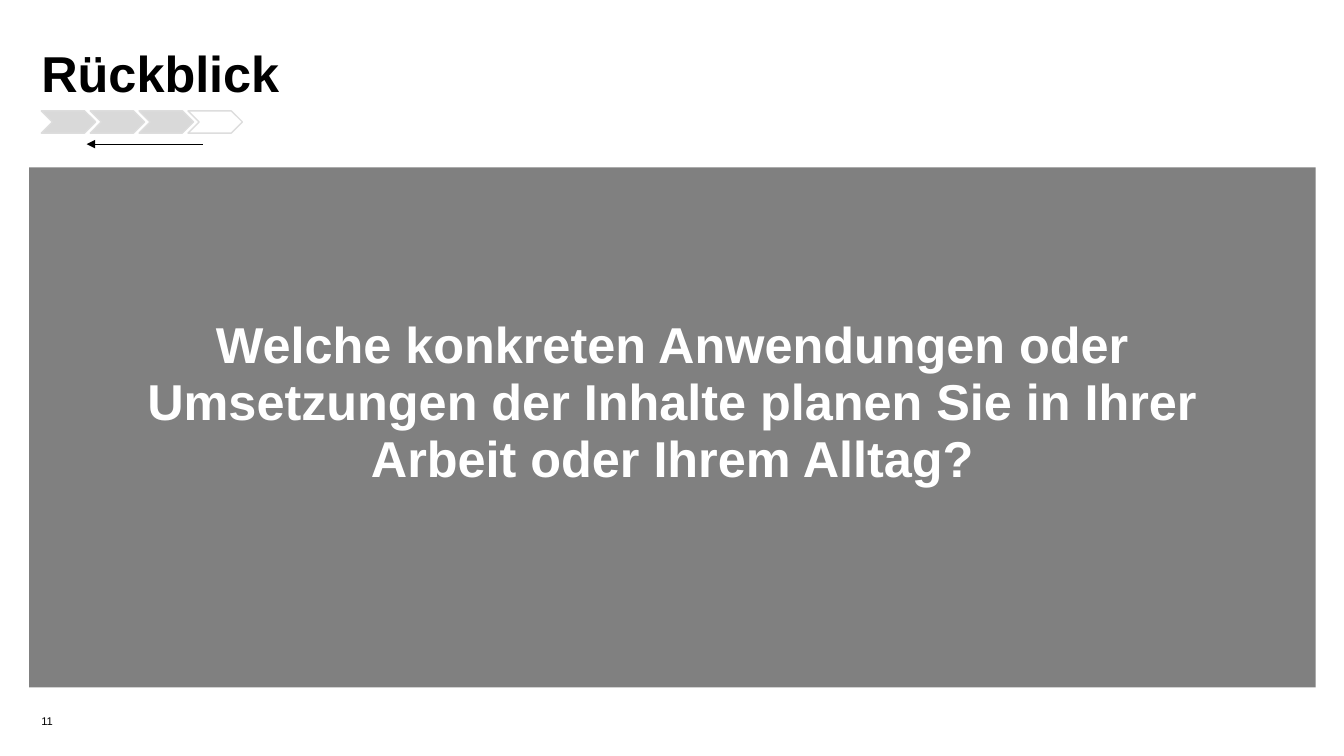
from lxml import etree
from pptx import Presentation
from pptx import util as u
from pptx.dml.color import RGBColor
from pptx.enum import shapes, text
from pptx.oxml import ns

BLACK = RGBColor(0x00, 0x00, 0x00)
WHITE = RGBColor(0xFF, 0xFF, 0xFF)
PANEL_GRAY = RGBColor(0x80, 0x80, 0x80)
STEP_GRAY = RGBColor(0xD9, 0xD9, 0xD9)
STEP_LINE = RGBColor(0xDD, 0xDD, 0xDD)

STEP_COUNT = 4
STEP_PITCH = 0.485


class SlideBuilder:
    font_name = "Arial"

    def __init__(self, presentation):
        self.slide = presentation.slides.add_slide(presentation.slide_layouts[5])

    def set_text(self, shape, content, size, color, bold=False, insets=(0, 0, 0, 0),
                 anchor=text.MSO_ANCHOR.TOP, align=text.PP_ALIGN.LEFT, spacing=1.0):
        """Fill a shape with one formatted paragraph; insets run left, top, right, bottom."""
        frame = shape.text_frame
        frame.text = content
        frame_format = {"word_wrap": True, "auto_size": text.MSO_AUTO_SIZE.NONE,
                        "vertical_anchor": anchor}
        for side, inset in zip(("left", "top", "right", "bottom"), insets):
            frame_format[f"margin_{side}"] = u.Inches(inset)
        paragraph = frame.paragraphs[0]
        font = paragraph.runs[0].font
        font.color.rgb = color
        formats = (
            (frame, frame_format),
            (paragraph, {"alignment": align, "line_spacing": spacing}),
            (font, {"name": self.font_name, "size": u.Pt(size), "bold": bold}),
        )
        for target, values in formats:
            for name, value in values.items():
                setattr(target, name, value)

    def title(self, content, left, top, width, height):
        title = self.slide.shapes.title
        position = {"left": left, "top": top, "width": width, "height": height}
        for name, value in position.items():
            setattr(title, name, u.Inches(value))
        self.set_text(title, content, 36, BLACK, bold=True, anchor=text.MSO_ANCHOR.MIDDLE)

    def text_box(self, content, left, top, width, height, size, **options):
        box = self.slide.shapes.add_textbox(*map(u.Inches, (left, top, width, height)))
        self.set_text(box, content, size, BLACK, **options)

    def shape(self, kind, left, top, width, height, fill, line=None, parent=None):
        container = (parent or self.slide).shapes
        shape = container.add_shape(kind, *map(u.Inches, (left, top, width, height)))
        shape.shadow.inherit = False
        shape.fill.solid()
        shape.fill.fore_color.rgb = fill
        if line is None:
            shape.line.fill.background()
        else:
            shape.line.color.rgb = line
            shape.line.width = u.Pt(1)
        return shape

    def progress(self, left, top, width, height):
        """Draw the chain of steps, with the last one left open."""
        group = self.slide.shapes.add_group_shape()
        for step in range(STEP_COUNT):
            fill = WHITE if step == STEP_COUNT - 1 else STEP_GRAY
            self.shape(shapes.MSO_SHAPE.CHEVRON, left + step * STEP_PITCH, top,
                       width, height, fill, STEP_LINE, group)

    def arrow(self, start_x, start_y, end_x, end_y):
        points = map(u.Inches, (start_x, start_y, end_x, end_y))
        arrow = self.slide.shapes.add_connector(shapes.MSO_CONNECTOR.STRAIGHT, *points)
        arrow.line.color.rgb = BLACK
        arrow.line.width = u.Pt(0.5)
        properties = arrow._element.spPr
        outline = properties.find(ns.qn("a:ln"))
        etree.SubElement(outline, ns.qn("a:tailEnd"), type="triangle")
        etree.SubElement(properties, ns.qn("a:effectLst"))


def main():
    presentation = Presentation()
    presentation.slide_width = u.Inches(13.33)
    presentation.slide_height = u.Inches(7.5)

    builder = SlideBuilder(presentation)
    builder.title("Rückblick", 0.41, 0.41, 9.65, 0.62)
    panel = builder.shape(shapes.MSO_SHAPE.RECTANGLE, 0.29, 1.66, 12.76, 5.16, PANEL_GRAY)
    builder.set_text(
        panel,
        "Welche konkreten Anwendungen oder Umsetzungen der Inhalte planen Sie "
        "in Ihrer Arbeit oder Ihrem Alltag?",
        36, WHITE, bold=True, insets=(0.39, 1.5, 0.39, 0.39),
        align=text.PP_ALIGN.CENTER, spacing=0.94)
    builder.progress(0.41, 1.1, 0.54, 0.22)
    builder.arrow(2.01, 1.43, 0.86, 1.43)
    builder.text_box("11", 0.41, 6.9, 1.57, 0.32, 8, anchor=text.MSO_ANCHOR.BOTTOM)

    presentation.save("out.pptx")


if __name__ == "__main__":
    main()
